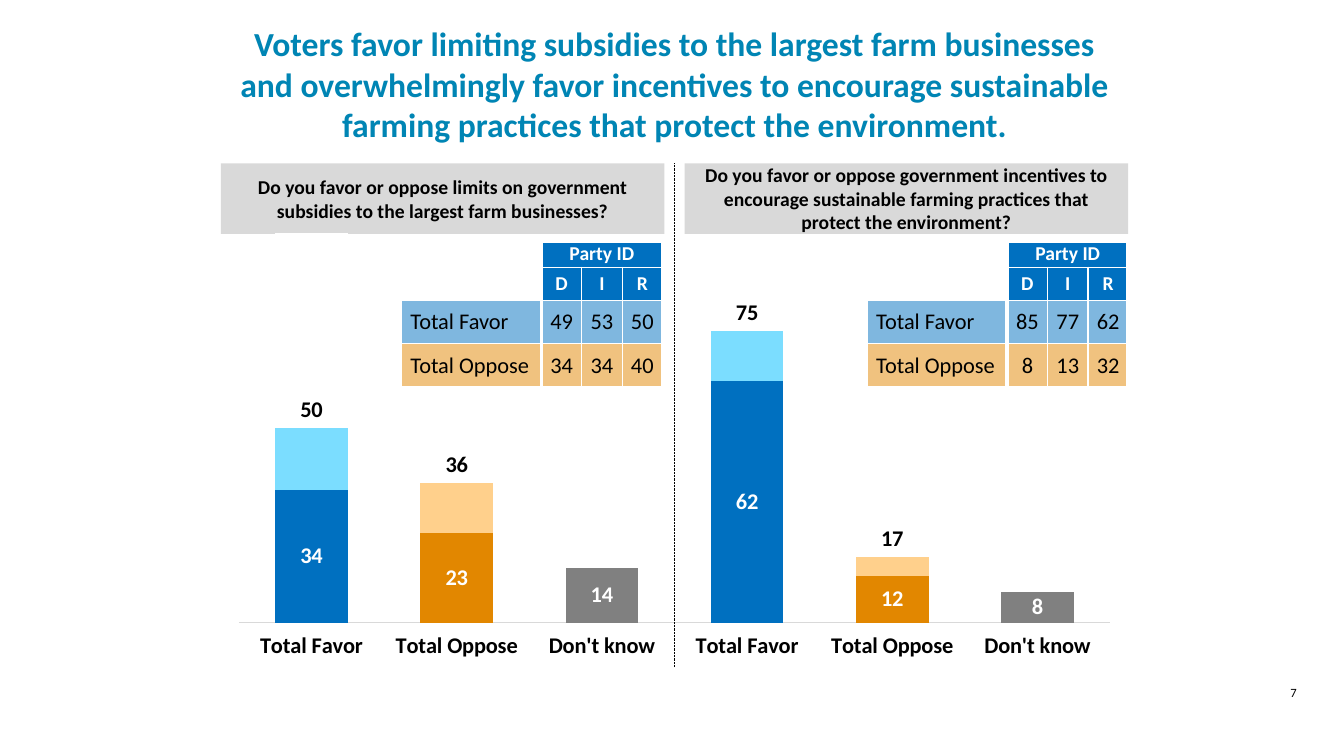
"""Build the farm subsidy polling slide with its chart and party tables."""
from lxml.etree import SubElement, fromstring
from pptx import Presentation
from pptx.chart.data import CategoryChartData
from pptx.dml.color import RGBColor
from pptx.enum.chart import XL_CHART_TYPE as ChartType, XL_LABEL_POSITION as LabelPosition
from pptx.enum.chart import XL_TICK_LABEL_POSITION as TickLabels, XL_TICK_MARK as TickMark
from pptx.enum.dml import MSO_LINE as Dash
from pptx.enum.shapes import MSO_CONNECTOR as Connector, MSO_SHAPE as Shape
from pptx.enum.text import MSO_ANCHOR as Anchor, PP_ALIGN as Align
from pptx.oxml import parse_xml
from pptx.oxml.ns import nsdecls, qn
from pptx.util import Inches, Pt

TITLE = ("Voters favor limiting subsidies to the largest farm businesses and overwhelmingly favor "
         "incentives to encourage sustainable farming practices that protect the environment.")
ANSWERS = ["Total Favor", "Total Oppose", "Don't know"]
QUESTIONS = [
    {"text": "Do you favor or oppose limits on government subsidies to the largest farm businesses?",
     "strong": [34, 23, 14], "lean": [16, 13, None], "total": [50, 36, None],
     "party": [["49", "53", "50"], ["34", "34", "40"]]},
    {"text": "Do you favor or oppose government incentives to encourage sustainable farming "
             "practices that protect the environment?",
     "strong": [62, 12, 8], "lean": [13, 5, None], "total": [75, 17, None],
     "party": [["85", "77", "62"], ["8", "13", "32"]]},
]
PARTIES = ["D", "I", "R"]
COLORS = {"title": "0085B4", "black": "000000", "white": "FFFFFF", "box": "D9D9D9",
          "favor": "0070C0", "oppose": "E28700", "unsure": "808080",
          "favor_lean": "7BDDFF", "oppose_lean": "FFD08C"}
BAR_COLORS = {"strong": ["favor", "oppose", "unsure"],
              "lean": ["favor_lean", "oppose_lean", "white"],
              "total": ["white"] * 3}
LABELS = {"strong": ("white", LabelPosition.CENTER), "total": ("black", LabelPosition.INSIDE_BASE)}
FONT = "Calibri"

WIDTH, HEIGHT = 13.33, 7.5
LEFT, CONTENT_WIDTH = 2.19, 9
TOP, BOX_HEIGHT, GAP = 1.62, 0.7, 0.2
BOX_WIDTH = (CONTENT_WIDTH - GAP) / 2
MIDDLE = LEFT + CONTENT_WIDTH / 2
TABLE_COLUMNS = [1.4, 0.4, 0.4, 0.4]
TABLE_ROWS = [0.26, 0.33, 0.43, 0.43]
TABLE_TOP = 2.39
TABLE_RIGHTS = [6.57, LEFT + CONTENT_WIDTH]
PLOT_SHARES = {"x": 0.02, "y": 0.02, "w": 0.96, "h": 0.89}


def color(name):
    return RGBColor.from_string(COLORS[name])


def style_font(font, size, name, bold=False):
    font.name, font.size, font.bold = FONT, Pt(size), bold
    font.color.rgb = color(name)


def write(frame, text, size, name, bold=False, align=Align.CENTER):
    paragraph = frame.paragraphs[0]
    paragraph.alignment = align
    run = paragraph.add_run()
    run.text = text
    style_font(run.font, size, name, bold)


def add_text(slide, bounds, text, size, name, bold=False, anchor=Anchor.TOP):
    frame = slide.shapes.add_textbox(*map(Inches, bounds)).text_frame
    frame.word_wrap = True
    frame.vertical_anchor = anchor
    write(frame, text, size, name, bold)


def add_question(slide, index):
    left = LEFT + index * (BOX_WIDTH + GAP)
    box = slide.shapes.add_shape(Shape.RECTANGLE, *map(Inches, (left, TOP, BOX_WIDTH, BOX_HEIGHT)))
    box.shadow.inherit = False
    box.fill.solid()
    box.fill.fore_color.rgb = color("box")
    box.line.fill.background()
    box.text_frame.word_wrap = True
    box.text_frame.vertical_anchor = Anchor.MIDDLE
    write(box.text_frame, QUESTIONS[index]["text"], 14, "black", True)


def add_chart(slide):
    data = CategoryChartData()
    data.categories = ANSWERS * len(QUESTIONS)
    for number, key in enumerate(BAR_COLORS, 1):
        data.add_series(f"Series {number}", [value for question in QUESTIONS for value in question[key]])
    bounds = map(Inches, (LEFT, 2.23, CONTENT_WIDTH, 4.34))
    chart = slide.shapes.add_chart(ChartType.COLUMN_STACKED, *bounds, data).chart
    chart.has_legend = chart.has_title = False
    style_font(chart.font, 10, "black")
    plot = chart.plots[0]
    plot.gap_width, plot.overlap, plot.vary_by_categories = 100, 100, False

    values, categories = chart.value_axis, chart.category_axis
    values.minimum_scale, values.maximum_scale = 0, 100
    values.has_major_gridlines = values.visible = False
    categories.major_tick_mark = categories.minor_tick_mark = TickMark.NONE
    categories.tick_label_position = TickLabels.LOW
    categories.format.line.color.rgb = color("box")
    categories.format.line.width = Pt(0.75)
    style_font(categories.tick_labels.font, 16, "black", True)

    for series, (key, names) in zip(plot.series, BAR_COLORS.items()):
        series.format.fill.solid()
        series.format.fill.fore_color.rgb = color(names[0])
        for index, name in enumerate(names * len(QUESTIONS)):
            if name != names[0]:
                fill = series.points[index].format.fill
                fill.solid()
                fill.fore_color.rgb = color(name)
        if key in LABELS:
            label_color, position = LABELS[key]
            labels = series.data_labels
            labels.show_value = True
            labels.position = position
            style_font(labels.font, 16, label_color, True)

    shares = "".join(f'<c:{side} val="{share}"/>' for side, share in PLOT_SHARES.items())
    layout = parse_xml(f'<c:layout {nsdecls("c")}><c:manualLayout><c:layoutTarget val="inner"/>'
                       f'<c:xMode val="edge"/><c:yMode val="edge"/>{shares}</c:manualLayout></c:layout>')
    area = chart.element.find(".//" + qn("c:plotArea"))
    for old in area.findall(qn("c:layout")):
        area.remove(old)
    area.insert(0, layout)


def add_divider(slide):
    ends = map(Inches, (MIDDLE, TOP, MIDDLE, TOP + 5))
    divider = slide.shapes.add_connector(Connector.STRAIGHT, *ends)
    divider.line.color.rgb = color("black")
    divider.line.width = Pt(0.25)
    divider.line.dash_style = Dash.SQUARE_DOT
    SubElement(divider.element.spPr, qn("a:effectLst"))


def style_cell(cell, row, column):
    properties = cell._tc.get_or_add_tcPr()
    widths = {"L": 3 if column < 2 else 1,
              "R": 3 if column in (0, 3) or row == 0 else 1,
              "T": 3 if row == 0 else 1, "B": 1}
    for side, width in widths.items():
        line = SubElement(properties, qn(f"a:ln{side}"), w=str(Pt(width)))
        SubElement(SubElement(line, qn("a:solidFill")), qn("a:srgbClr"), val=COLORS["white"])
    cell.vertical_anchor = Anchor.MIDDLE
    if row < 2 or column:
        cell.margin_left = cell.margin_right = cell.margin_top = cell.margin_bottom = 0
    if row < 2 and column == 0:
        cell.fill.background()
        return
    cell.fill.solid()
    cell.fill.fore_color.rgb = color("oppose" if row == 3 else "favor")
    if row > 1:
        shade = properties.find(qn("a:solidFill")).find(qn("a:srgbClr"))
        SubElement(shade, qn("a:alpha"), val="50000")


def add_party_table(slide, question, right):
    rows = [["", "Party ID", "", ""], ["", *PARTIES]]
    rows += [[answer, *shares] for answer, shares in zip(ANSWERS, question["party"])]
    size = sum(TABLE_COLUMNS), sum(TABLE_ROWS)
    bounds = map(Inches, (right - size[0], TABLE_TOP, *size))
    table = slide.shapes.add_table(len(rows), len(TABLE_COLUMNS), *bounds).table
    table.first_row = table.horz_banding = False
    for column, width in zip(table.columns, TABLE_COLUMNS):
        column.width = Inches(width)
    for row, height in zip(table.rows, TABLE_ROWS):
        row.height = Inches(height)
    for r, texts in enumerate(rows):
        for c, text in enumerate(texts):
            cell = table.cell(r, c)
            style_cell(cell, r, c)
            if text:
                header = r < 2
                write(cell.text_frame, text, 14 if header else 16, "white" if header else "black",
                      header, Align.CENTER if c else Align.LEFT)
            else:
                SubElement(cell.text_frame.paragraphs[0]._p, qn("a:endParaRPr"), sz="1400")
    table.cell(0, 0).merge(table.cell(1, 0))
    table.cell(0, 1).merge(table.cell(0, 3))


def main():
    presentation = Presentation()
    presentation.slide_width, presentation.slide_height = Inches(WIDTH), Inches(HEIGHT)
    slide = presentation.slides.add_slide(presentation.slide_layouts[6])
    add_text(slide, (LEFT, 0.25, CONTENT_WIDTH, 1.16), TITLE, 24, "title", True, Anchor.MIDDLE)
    add_text(slide, (WIDTH - 1, 6.75, 1, 0.33), "7", 9, "black")
    add_question(slide, 0)
    add_chart(slide)
    add_question(slide, 1)
    add_divider(slide)
    for question, right in zip(QUESTIONS, TABLE_RIGHTS):
        add_party_table(slide, question, right)
    presentation.save("out.pptx")


if __name__ == "__main__":
    main()
